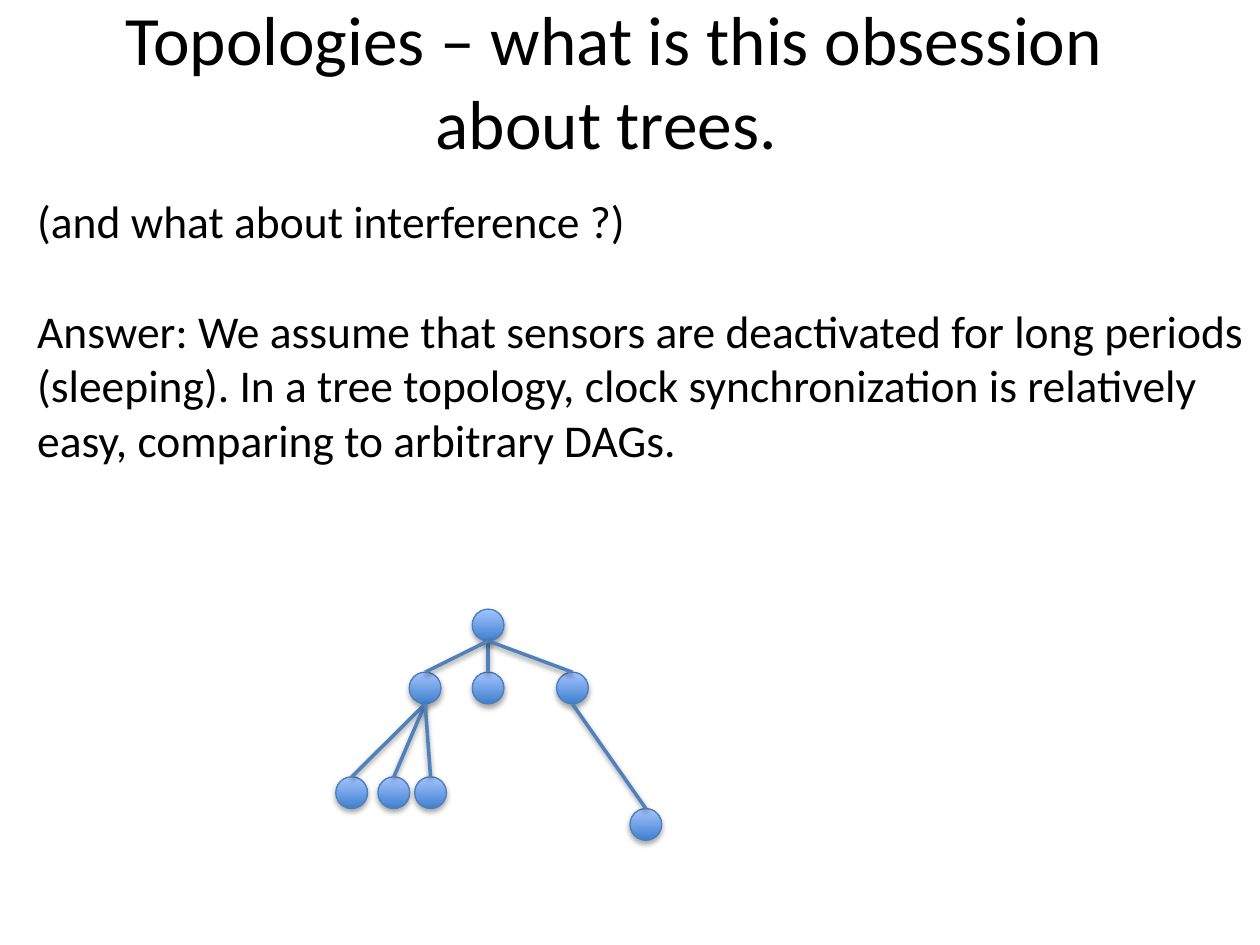
"""Build a slide on why sensor networks use tree topologies."""
from lxml.etree import SubElement
from pptx import Presentation
from pptx.dml.color import RGBColor
from pptx.enum.shapes import MSO_CONNECTOR as LINK, MSO_SHAPE as SHAPE
from pptx.enum.text import MSO_ANCHOR as ANCHOR, PP_ALIGN as ALIGN
from pptx.oxml.ns import qn
from pptx.util import Cm, Pt

COLORS = {
    "text": "000000",
    "shadow": "000000",
    "node_bottom": "3F80CE",
    "node_top": "A4C4FF",
    "outline": "4B7EBC",
    "edge": "4F81BD",
}
NODE_SIZE = 0.64
NODES = {
    "root": (9.84, 12.28),
    "left": (8.57, 13.55),
    "middle": (9.84, 13.55),
    "right": (11.54, 13.55),
    "leaf_b": (7.94, 15.66),
    "leaf_c": (8.68, 15.66),
    "leaf_a": (7.09, 15.66),
    "leaf_d": (13.02, 16.3),
}
CHILDREN = {
    "left": ["leaf_a", "leaf_b", "leaf_c"],
    "root": ["middle", "right", "left"],
    "right": ["leaf_d"],
}
TITLE = "Topologies – what is this obsession about trees. "
BODY = [
    "(and what about interference ?)",
    "Answer: We assume that sensors are deactivated for long periods "
    "(sleeping). In a tree topology, clock synchronization is relatively "
    "easy, comparing to arbitrary DAGs.",
]


def color(name):
    return RGBColor.from_string(COLORS[name])


def add_shadow(shape, distance, opacity):
    effects = SubElement(shape._element.spPr, qn("a:effectLst"))
    shadow = SubElement(effects, qn("a:outerShdw"), blurRad=str(Pt(3.1)),
                        dist=str(Pt(distance)), dir="5400000", rotWithShape="0")
    tint = SubElement(shadow, qn("a:srgbClr"), val=COLORS["shadow"])
    SubElement(tint, qn("a:alpha"), val=str(opacity * 1000))


def add_node(page, center, top):
    node = page.shapes.add_shape(SHAPE.OVAL, Cm(center - NODE_SIZE / 2), Cm(top),
                                 Cm(NODE_SIZE), Cm(NODE_SIZE))
    node.fill.gradient()
    node.fill.gradient_angle = 90
    for stop, name in zip(node.fill.gradient_stops, ("node_bottom", "node_top")):
        stop.color.rgb = color(name)
    node.line.color.rgb = color("outline")
    node.line.width = Pt(0.75)
    add_shadow(node, 1.8, 35)


def add_edge(page, parent, child):
    (start, top), (end, bottom) = NODES[parent], NODES[child]
    edge = page.shapes.add_connector(LINK.STRAIGHT, Cm(start), Cm(top + NODE_SIZE),
                                     Cm(end), Cm(bottom))
    edge.line.color.rgb = color("edge")
    edge.line.width = Pt(2)
    add_shadow(edge, 1.6, 38)


def add_text(page, place, paragraphs, size, align=ALIGN.LEFT, anchor=ANCHOR.TOP, gap=0):
    frame = page.shapes.add_textbox(*map(Cm, place)).text_frame
    frame.word_wrap = True
    frame.vertical_anchor = anchor
    frame.text = "\n".join(paragraphs)
    for index, para in enumerate(frame.paragraphs):
        para.alignment = align
        para.space_before = Pt(gap if index else 0)
        para.font.name = "Calibri"
        para.font.size = Pt(size)
        para.font.color.rgb = color("text")


def main():
    deck = Presentation()
    deck.slide_width, deck.slide_height = Cm(25.4), Cm(19.05)
    page = deck.slides.add_slide(deck.slide_layouts[6])
    add_text(page, (1.9, 0.85, 20.96, 1.52), [TITLE], 39.6, ALIGN.CENTER, ANCHOR.MIDDLE)
    for center, top in NODES.values():
        add_node(page, center, top)
    for parent, children in CHILDREN.items():
        for child in children:
            add_edge(page, parent, child)
    add_text(page, (0.5, 3.76, 24.9, 6.58), BODY, 26, gap=31.7)
    deck.save("out.pptx")


if __name__ == "__main__":
    main()
